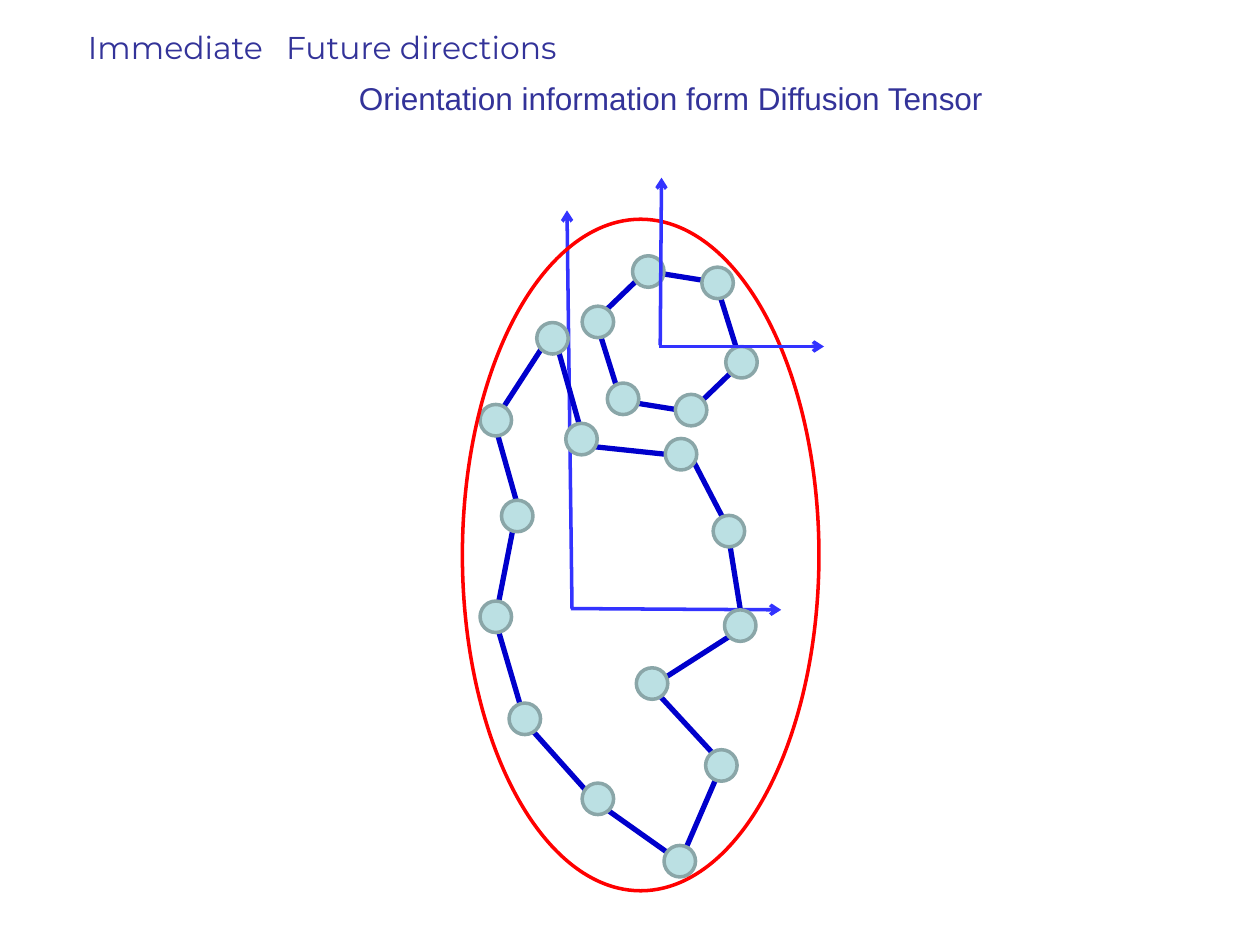
from lxml import etree
from pptx import Presentation
from pptx import util as u
from pptx.dml.color import RGBColor
from pptx.enum import shapes, text
from pptx.oxml import ns

INDIGO = RGBColor(0x33, 0x33, 0x99)
AXIS = RGBColor(0x33, 0x33, 0xFF)
LINK = RGBColor(0x00, 0x00, 0xCC)
FILL = RGBColor(0xBB, 0xE0, 0xE3)
EDGE = RGBColor(0x8A, 0xA6, 0xA8)
RED = RGBColor(0xFF, 0x00, 0x00)

COLS, ROWS = 100, 75
WIDE, HIGH = u.Inches(10), u.Inches(7.5)
NODE = 2.5

# Node centres around the ring, in grid units from its box
RING = [(12.85, 8.75), (10.95, 2.45), (5.45, 1.55),
        (1.45, 5.55), (3.45, 11.65), (8.85, 12.55)]

# Node centre, then the start and end of its link to the next node
CHAIN = [
    ((5.85, 1.85), (6, 1.7), (8.4, 10.2)),
    ((8.15, 9.85), (7.7, 10.3), (16.2, 11.2)),
    ((16.05, 11.05), (16.1, 9.8), (20.1, 17.5)),
    ((19.85, 17.15), (19.6, 16.2), (21, 24.9)),
    ((20.75, 24.65), (21, 24.8), (13.5, 29.6)),
    ((13.75, 29.25), (13.6, 29.4), (19.6, 35.9)),
    ((19.25, 35.75), (19.3, 35.7), (15.8, 43.8)),
    ((15.95, 43.35), (16.3, 43.6), (9.1, 38.5)),
    ((9.45, 38.4), (9.1, 38.4), (3.2, 31.8)),
    ((3.65, 32.05), (3.6, 32), (1.1, 23.5)),
    ((1.35, 23.95), (1.3, 24.2), (3, 15.5)),
    ((3.05, 15.95), (3.5, 16.6), (1.1, 8.1)),
    ((1.35, 8.35), (1, 8.8), (5.8, 1.4)),
]


def col(n):
    return u.Emu(round(n * WIDE / COLS))


def row(n):
    return u.Emu(round(n * HIGH / ROWS))


def area(x, y, w, h):
    return col(x), row(y), col(w), row(h)


def write(box, words, at, font="Montserrat", size=18, color=INDIGO, wrap=False):
    box.left, box.top, box.width, box.height = area(*at)
    frame = box.text_frame
    frame.word_wrap = wrap
    frame.auto_size = text.MSO_AUTO_SIZE.SHAPE_TO_FIT_TEXT
    frame.vertical_anchor = text.MSO_ANCHOR.TOP
    para = frame.paragraphs[0]
    para.alignment = text.PP_ALIGN.LEFT
    run = para.add_run()
    run.text = words
    run.font.name, run.font.size = font, u.Pt(size)
    run.font.color.rgb = color


def draw(home, kind, at, line, width, fill=None):
    shape = home.add_shape(kind, *area(*at))
    shape.shadow.inherit = False
    if fill is None:
        shape.fill.background()
    else:
        shape.fill.solid()
        shape.fill.fore_color.rgb = fill
    shape.line.color.rgb = line
    shape.line.width = u.Pt(width)
    return shape


def join(home, start, end, color, width, arrow=False):
    line = home.add_connector(shapes.MSO_CONNECTOR.STRAIGHT,
                              col(start[0]), row(start[1]),
                              col(end[0]), row(end[1]))
    line.line.color.rgb = color
    line.line.width = u.Pt(width)
    if arrow:
        etree.SubElement(line.line._get_or_add_ln(), ns.qn("a:tailEnd"), type="arrow")
    etree.SubElement(line._element.spPr, ns.qn("a:effectLst"))


def dot(home, x, y):
    draw(home, shapes.MSO_SHAPE.OVAL,
         (x - NODE / 2, y - NODE / 2, NODE, NODE), EDGE, 2, FILL)


def axes(slide, x, y, across, up):
    """Two arrows from a corner; each is given as its start and end offsets."""
    home = slide.shapes.add_group_shape().shapes
    for (a, b), (c, d) in (across, up):
        join(home, (x + a, y + b), (x + c, y + d), AXIS, 2, arrow=True)


def ring(slide, x, y):
    home = slide.shapes.add_group_shape().shapes
    hexa = draw(home, shapes.MSO_SHAPE.HEXAGON,
                (x + 1.2, y + 2.1, 11.7, 10), LINK, 3)
    hexa.rotation = 252.6
    for a, b in RING:
        dot(home, x + a, y + b)


def chain(slide, x, y):
    home = slide.shapes.add_group_shape().shapes
    for _, (a, b), (c, d) in CHAIN:
        join(home, (x + a, y + b), (x + c, y + d), LINK, 3)
    for (a, b), _, _ in CHAIN:
        dot(home, x + a, y + b)


def header(slide, x, y):
    write(slide.shapes.title, "Future directions", (x + 15.7, y, 26.6, 4))
    for words, at, style in (
        ("Immediate", (x, y, 17.6, 4), {}),
        ("Orientation information form Diffusion Tensor",
         (x + 21.5, y + 4.1, 64.2, 4), {"font": "Arial", "wrap": True}),
    ):
        write(slide.shapes.add_textbox(0, 0, 0, 0), words, at, **style)


def main():
    deck = Presentation()
    deck.slide_width, deck.slide_height = WIDE, HIGH
    slide = deck.slides.add_slide(deck.slide_layouts[5])
    header(slide, 6, 1.7)
    axes(slide, 45.3, 48.3, ((0, 0), (16.7, 0.1)), ((0.1, 0), (-0.3, -31.6)))
    ring(slide, 46, 20)
    chain(slide, 38, 25)
    draw(slide.shapes, shapes.MSO_SHAPE.OVAL, (36.7, 17.4, 28.3, 53.3), RED, 2)
    axes(slide, 52.3, 27.5, ((0, 0), (13.1, 0)), ((0.1, -0.1), (0.2, -13.4)))
    deck.save("out.pptx")


if __name__ == "__main__":
    main()
